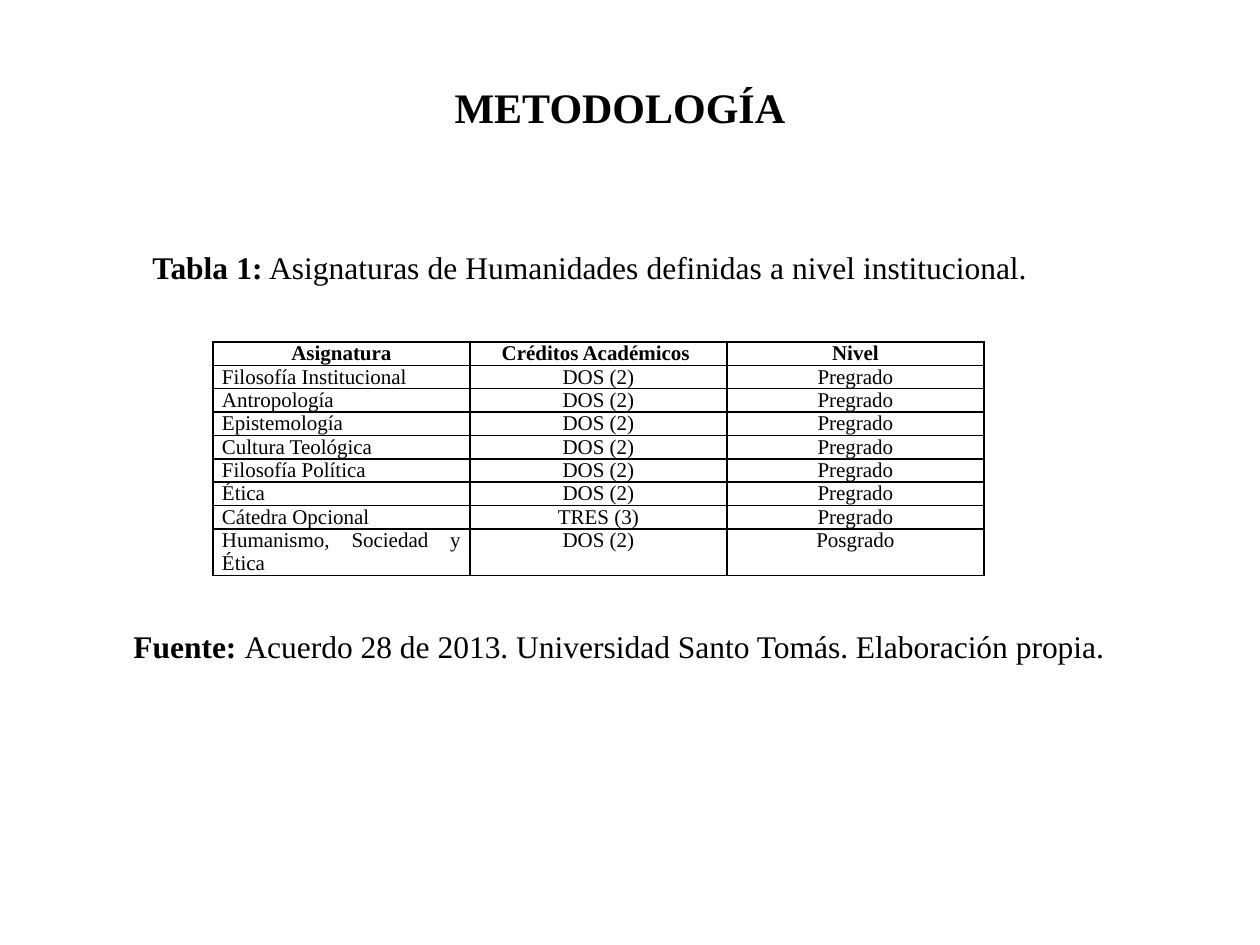
from lxml import etree
from pptx import Presentation
from pptx.dml.color import RGBColor
from pptx.enum.text import MSO_ANCHOR, PP_ALIGN
from pptx.oxml.ns import qn
from pptx.util import Pt

PX = 914400 // 126
CENTER, JUSTIFY = PP_ALIGN.CENTER, PP_ALIGN.JUSTIFY
TOP, MIDDLE = MSO_ANCHOR.TOP, MSO_ANCHOR.MIDDLE
BLACK = "000000"


def color(value):
    return RGBColor.from_string(value)


def write(para, align, size, *parts):
    para.alignment = align
    for text, bold in parts:
        run = para.add_run()
        run.text = text
        look = {"name": "Times New Roman", "size": Pt(size), "bold": bold}
        for key, value in look.items():
            setattr(run.font, key, value)
        run.font.color.rgb = color(BLACK)


deck = Presentation()
deck.slide_width, deck.slide_height = 1260 * PX, 945 * PX
slide = deck.slides.add_slide(deck.slide_layouts[5])

title = slide.shapes.title
place = {"left": 88, "top": 72, "width": 1072, "height": 69}
for key, value in place.items():
    setattr(title, key, value * PX)
title.text_frame.vertical_anchor = MIDDLE
write(title.text_frame.paragraphs[0], CENTER, 24, ("METODOLOGÍA ", True))

rows = [
    ("Asignatura", "Créditos Académicos ", "Nivel"),
    ("Filosofía Institucional", "DOS (2)", "Pregrado"),
    ("Antropología ", "DOS (2)", "Pregrado"),
    ("Epistemología", "DOS (2)", "Pregrado"),
    ("Cultura Teológica", "DOS (2)", "Pregrado"),
    ("Filosofía Política ", "DOS (2)", "Pregrado"),
    ("Ética ", "DOS (2)", "Pregrado"),
    ("Cátedra Opcional", "TRES (3)", "Pregrado"),
    ("Humanismo, Sociedad y Ética ", "DOS (2)", "Posgrado"),
]
frame = slide.shapes.add_table(
    len(rows), 3, 213 * PX, 342 * PX, 771 * PX, 23 * len(rows) * PX
)
table = frame.table
table.first_row = table.horz_banding = False
inset = {"margin_left": 9, "margin_right": 9, "margin_top": 0, "margin_bottom": 0}
for i, row in enumerate(rows):
    for j, text in enumerate(row):
        cell = table.cell(i, j)
        for key, value in inset.items():
            setattr(cell, key, value * PX)
        cell.vertical_anchor = TOP
        align = JUSTIFY if i and j == 0 else CENTER
        write(cell.text_frame.paragraphs[0], align, 12, (text, i == 0))
        props = cell._tc.get_or_add_tcPr()
        for side in ("lnL", "lnR", "lnT", "lnB"):
            line = etree.SubElement(props, qn("a:" + side), w=str(Pt(1)))
            fill = etree.SubElement(line, qn("a:solidFill"))
            etree.SubElement(fill, qn("a:srgbClr"), val=BLACK)
        cell.fill.background()

notes = [
    (140, 223, 900, "Tabla 1:", " Asignaturas de Humanidades definidas a nivel institucional. "),
    (121, 602, 1040, "Fuente: ", "Acuerdo 28 de 2013. Universidad Santo Tomás. Elaboración propia. "),
]
for left, top, width, label, text in notes:
    box = slide.shapes.add_textbox(left * PX, top * PX, width * PX, 70 * PX)
    box.text_frame.word_wrap = True
    para = box.text_frame.paragraphs[0]
    para.line_spacing = 1.5
    write(para, JUSTIFY, 18, (label, True), (text, False))

deck.save("out.pptx")
